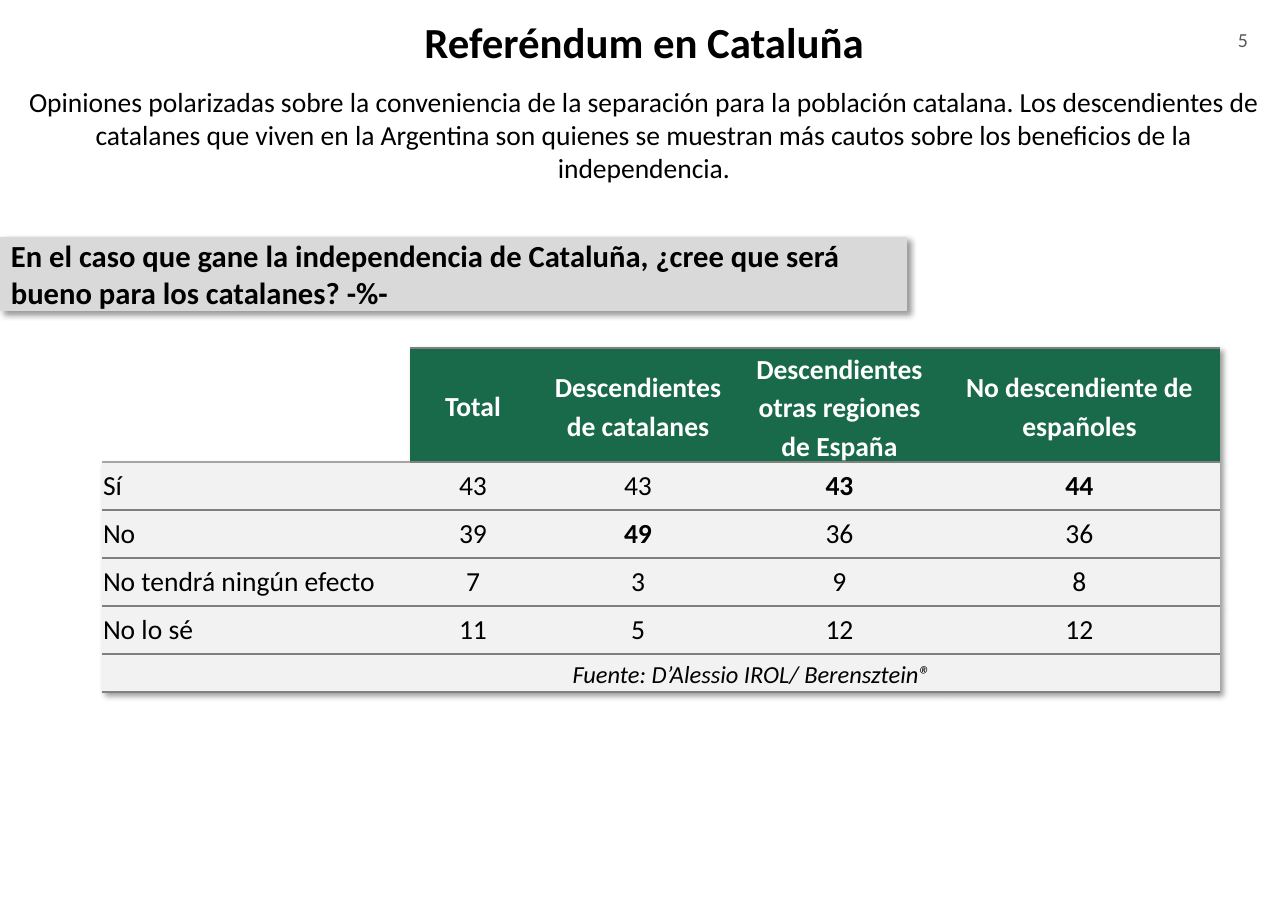
from lxml import etree
from pptx import Presentation, util as u
from pptx.dml import color
from pptx.enum import shapes, text
from pptx.oxml import ns

SCALE = 8300  # EMU per px
FONT = "Calibri"
GREEN, PALE, GREY = "19694B", "F2F2F2", "808080"
LEFT, MID, RIGHT = text.PP_ALIGN.LEFT, text.PP_ALIGN.CENTER, text.PP_ALIGN.RIGHT

HEADS = ["Total", "Descendientes de catalanes",
         "Descendientes otras regiones de España", "No descendiente de españoles"]
ROWS = [("Sí", 43, 43, 43, 44), ("No", 39, 49, 36, 36),
        ("No tendrá ningún efecto", 7, 3, 9, 8), ("No lo sé", 11, 5, 12, 12)]
STRONG = {(1, 3), (1, 4), (2, 2)}  # row, column
SOURCE = "Fuente: D’Alessio IROL/ Berensztein®"
WIDTHS = [308, 126, 204, 199, 281]
HEIGHTS = [114] + [48] * len(ROWS) + [38]


def px(*vals):
    return [u.Emu(v * SCALE) for v in vals]


def rgb(code):
    return color.RGBColor.from_string(code)


def write(frame, words, size=18, ink="000000", bold=False, italic=False,
          align=MID, space=None):
    para = frame.paragraphs[0]
    para.alignment = align
    para.line_spacing = space
    run = para.add_run()
    run.text = words
    font = run.font
    font.name, font.size, font.bold, font.italic = FONT, u.Pt(size), bold, italic
    font.color.rgb = rgb(ink)


def label(slide, box, words, anchor=text.MSO_ANCHOR.MIDDLE, **style):
    frame = slide.shapes.add_textbox(*px(*box)).text_frame
    frame.word_wrap = True
    frame.vertical_anchor = anchor
    write(frame, words, **style)


def shade(parent, index):
    """Put a soft shadow at a given place among the children."""
    old = parent.find(ns.qn("a:effectLst"))
    if old is not None:
        parent.remove(old)
    parent.insert(index, etree.fromstring(
        f'<a:effectLst {ns.nsdecls("a")}><a:outerShdw blurRad="50800" dist="38100" '
        'dir="2700000" algn="tl" rotWithShape="0"><a:srgbClr val="000000">'
        '<a:alpha val="40000"/></a:srgbClr></a:outerShdw></a:effectLst>'))


def banner(slide, box, words):
    shape = slide.shapes.add_shape(shapes.MSO_SHAPE.RECTANGLE, *px(*box))
    shape.fill.solid()
    shape.fill.fore_color.rgb = rgb("D9D9D9")
    shape.line.fill.background()
    shape.shadow.inherit = False
    props = shape.fill._xPr
    shade(props, len(props))
    shape.text_frame.word_wrap = True
    write(shape.text_frame, words, size=20, bold=True, align=LEFT)


def edges(cell, top, bottom):
    props = cell._tc.get_or_add_tcPr()
    for i, (side, code) in enumerate(zip("LRTB", (None, None, top, bottom))):
        paint = (f'<a:solidFill><a:srgbClr val="{code}"/></a:solidFill>'
                 if code else "<a:noFill/>")
        props.insert(i, etree.fromstring(
            f'<a:ln{side} {ns.nsdecls("a")} w="12700">{paint}</a:ln{side}>'))


def fill(cell, back, words="", pad=(1, 1, 1, 0), top=GREY, bottom=GREY, **style):
    if back:
        cell.fill.solid()
        cell.fill.fore_color.rgb = rgb(back)
    else:
        cell.fill.background()
    edges(cell, top, bottom)
    cell.vertical_anchor = text.MSO_ANCHOR.MIDDLE
    (cell.margin_left, cell.margin_top,
     cell.margin_right, cell.margin_bottom) = px(*pad)
    if words:
        write(cell.text_frame, words, **style)


def results(slide, x, y):
    frame = slide.shapes.add_table(len(HEIGHTS), len(WIDTHS),
                                   *px(x, y, sum(WIDTHS), sum(HEIGHTS)))
    table = frame.table
    table.first_row = table.horz_banding = False
    shade(table._tbl.tblPr, 0)
    for col, width in zip(table.columns, px(*WIDTHS)):
        col.width = width
    for row, height in zip(table.rows, px(*HEIGHTS)):
        row.height = height
    wide = (8, 0, 8, 0)

    # Header row
    fill(table.cell(0, 0), None, top=None, bottom="A6A6A6")
    for c, head in enumerate(HEADS, 1):
        fill(table.cell(0, c), GREEN, head, pad=wide, ink="FFFFFF", bold=True, space=1.15)

    # Answers
    for r, row in enumerate(ROWS, 1):
        for c, value in enumerate(row):
            fill(table.cell(r, c), PALE, str(value), bold=(r, c) in STRONG,
                 align=MID if c else LEFT,
                 top="A6A6A6" if (r, c) == (1, 0) else GREY)

    # Source row
    last = len(HEIGHTS) - 1
    table.cell(last, 0).merge(table.cell(last, 3))
    for c in range(len(WIDTHS)):
        fill(table.cell(last, c), PALE, "" if c else SOURCE, pad=wide,
             size=16, italic=True, align=RIGHT, space=1.15)


def main():
    deck = Presentation()
    deck.slide_width, deck.slide_height = px(1288, 911)
    slide = deck.slides.add_slide(deck.slide_layouts[6])

    # Page number and summary
    label(slide, (1194, 22, 98, 48), "5", anchor=text.MSO_ANCHOR.TOP,
          size=13, ink="595959")
    label(slide, (0, 79, 1288, 111),
          "Opiniones polarizadas sobre la conveniencia de la separación para la "
          "población catalana. Los descendientes de catalanes que viven en la "
          "Argentina son quienes se muestran más cautos sobre los beneficios de "
          "la independencia.")

    # Results, question and title
    results(slide, 102, 348)
    banner(slide, (0, 237, 907, 74),
           "En el caso que gane la independencia de Cataluña, ¿cree que será "
           "bueno para los catalanes? -%-")
    label(slide, (0, -11, 1288, 104), "Referéndum en Cataluña", size=28, bold=True)
    deck.save("out.pptx")


if __name__ == "__main__":
    main()
